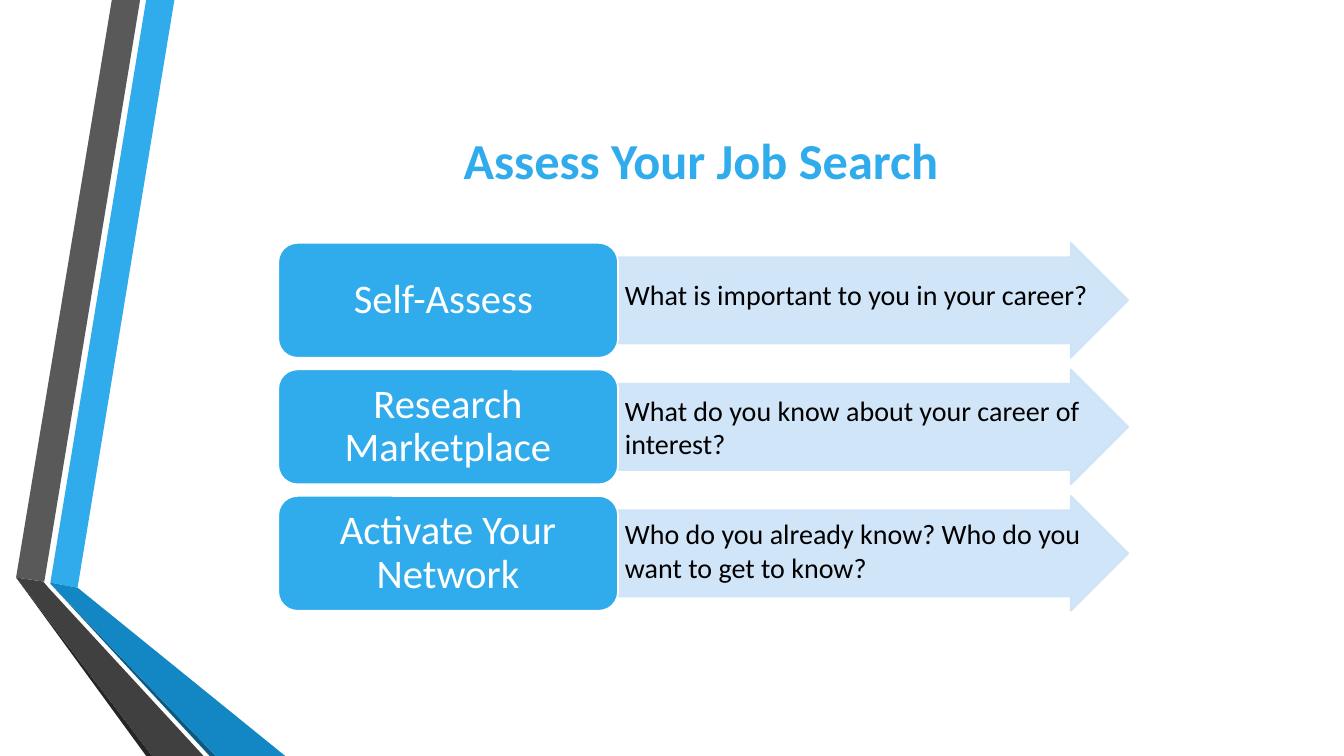
from dataclasses import dataclass

from lxml.etree import SubElement
from pptx import Presentation
from pptx.dml.color import RGBColor
from pptx.dml.fill import FillFormat
from pptx.enum.shapes import MSO_SHAPE
from pptx.enum.text import MSO_ANCHOR, PP_ALIGN
from pptx.oxml.ns import qn
from pptx.shapes.autoshape import Shape
from pptx.slide import Slide
from pptx.text.text import TextFrame
from pptx.util import Inches, Pt

COLORS = {
    "blue": "30ACEC",
    "deep_blue": "1287C3",
    "navy": "0C5A82",
    "gray": "595959",
    "dark_gray": "404040",
    "charcoal": "262626",
    "pale_blue": "CDE3F8",
    "white": "FFFFFF",
    "black": "000000",
}
FONT = "Calibri"
FIRST_TOP = 2.41
STEP_PITCH = 1.255
STEP_HEIGHT = 1.14
LABEL_LEFT, LABEL_WIDTH = 2.76, 3.37
ARROW_LEFT, ARROW_WIDTH = 6.13, 5.06
QUESTION_LEFT = 6.1


@dataclass(frozen=True)
class Ribbon:
    color: str
    points: tuple[tuple[float, float], ...]


@dataclass(frozen=True)
class Step:
    label: str
    question: str
    question_top: float
    question_width: float
    question_height: float
    wrap: bool = True


RIBBONS = [
    Ribbon("blue", ((0.5, 5.78), (0.77, 5.83), (1.73, 0), (1.45, 0))),
    Ribbon("gray", ((1.39, 0), (1.11, 0), (0.16, 5.73), (0.44, 5.77))),
    Ribbon("charcoal", ((0.16, 5.73), (1.45, 7.5), (1.51, 7.5))),
    Ribbon("navy", ((0.5, 5.79), (2.08, 7.5), (2.14, 7.5))),
    Ribbon("deep_blue", ((0.5, 5.79), (2.14, 7.5), (2.83, 7.5), (0.77, 5.83), (0.5, 5.78))),
    Ribbon("dark_gray", ((2.02, 7.5), (0.48, 5.83), (0.43, 5.77), (0.16, 5.73), (1.51, 7.5))),
]
STEPS = [
    Step("Self-Assess ", "What is important to you in your career?", 2.7, 4.84, 0.44, False),
    Step("Research Marketplace", "What do you know about your career of interest?", 3.85, 5.53, 0.77),
    Step("Activate Your Network", "Who do you already know? Who do you want to get to know?", 5.08, 4.75, 0.77),
]


def paint(fill: FillFormat, color: str) -> None:
    fill.solid()
    fill.fore_color.rgb = RGBColor.from_string(COLORS[color])


def write(frame: TextFrame, text: str, size: float, color: str,
          align: PP_ALIGN = PP_ALIGN.LEFT, bold: bool = False) -> None:
    para = frame.paragraphs[0]
    para.alignment = align
    span = para.add_run()
    span.text = text
    span.font.name = FONT
    span.font.size = Pt(size)
    span.font.bold = bold
    span.font.color.rgb = RGBColor.from_string(COLORS[color])


def add_ribbon(page: Slide, ribbon: Ribbon) -> None:
    corners = [(Inches(x), Inches(y)) for x, y in ribbon.points]
    builder = page.shapes.build_freeform(*corners[0])
    builder.add_line_segments(corners[1:], close=True)
    shape = builder.convert_to_shape()
    shape.shadow.inherit = False
    paint(shape.fill, ribbon.color)
    shape.line.fill.background()


def add_block(page: Slide, kind: MSO_SHAPE, left: float, top: float, width: float,
              fill: str, outline: str) -> Shape:
    block = page.shapes.add_shape(
        kind, Inches(left), Inches(top), Inches(width), Inches(STEP_HEIGHT))
    block.shadow.inherit = False
    paint(block.fill, fill)
    paint(block.line.fill, outline)
    block.line.width = Pt(1.25)
    return block


def add_text(page: Slide, left: float, top: float, width: float, height: float,
             wrap: bool = True) -> TextFrame:
    box = page.shapes.add_textbox(Inches(left), Inches(top), Inches(width), Inches(height))
    box.text_frame.word_wrap = wrap
    return box.text_frame


def add_arrow(page: Slide, top: float) -> None:
    arrow = add_block(page, MSO_SHAPE.RIGHT_ARROW, ARROW_LEFT, top, ARROW_WIDTH,
                      "pale_blue", "pale_blue")
    arrow.adjustments[0] = 0.75
    arrow.adjustments[1] = 0.5
    for color in arrow.element.spPr.iter(qn("a:srgbClr")):
        SubElement(color, qn("a:alpha"), val="90000")


def add_label(page: Slide, text: str, top: float) -> None:
    label = add_block(page, MSO_SHAPE.ROUNDED_RECTANGLE, LABEL_LEFT, top, LABEL_WIDTH,
                      "blue", "white")
    frame = label.text_frame
    frame.word_wrap = True
    frame.vertical_anchor = MSO_ANCHOR.MIDDLE
    frame.margin_left = frame.margin_right = Inches(0.12)
    frame.margin_top = frame.margin_bottom = Inches(0.06)
    write(frame, text, 29, "white", PP_ALIGN.CENTER)
    frame.paragraphs[0].line_spacing = 0.9


def main() -> None:
    deck = Presentation()
    deck.slide_width = Inches(13.33)
    deck.slide_height = Inches(7.5)
    page = deck.slides.add_slide(deck.slide_layouts[6])

    for ribbon in RIBBONS:
        add_ribbon(page, ribbon)

    title = add_text(page, 2.74, 0.5, 8.43, 2.17)
    title.vertical_anchor = MSO_ANCHOR.MIDDLE
    write(title, "Assess Your Job Search", 36, "blue", PP_ALIGN.CENTER, bold=True)

    for index, step in enumerate(STEPS):
        top = FIRST_TOP + index * STEP_PITCH
        add_arrow(page, top)
        add_label(page, step.label, top)
        question = add_text(page, QUESTION_LEFT, step.question_top, step.question_width,
                            step.question_height, step.wrap)
        write(question, step.question, 20, "black")

    deck.save("out.pptx")


if __name__ == "__main__":
    main()
